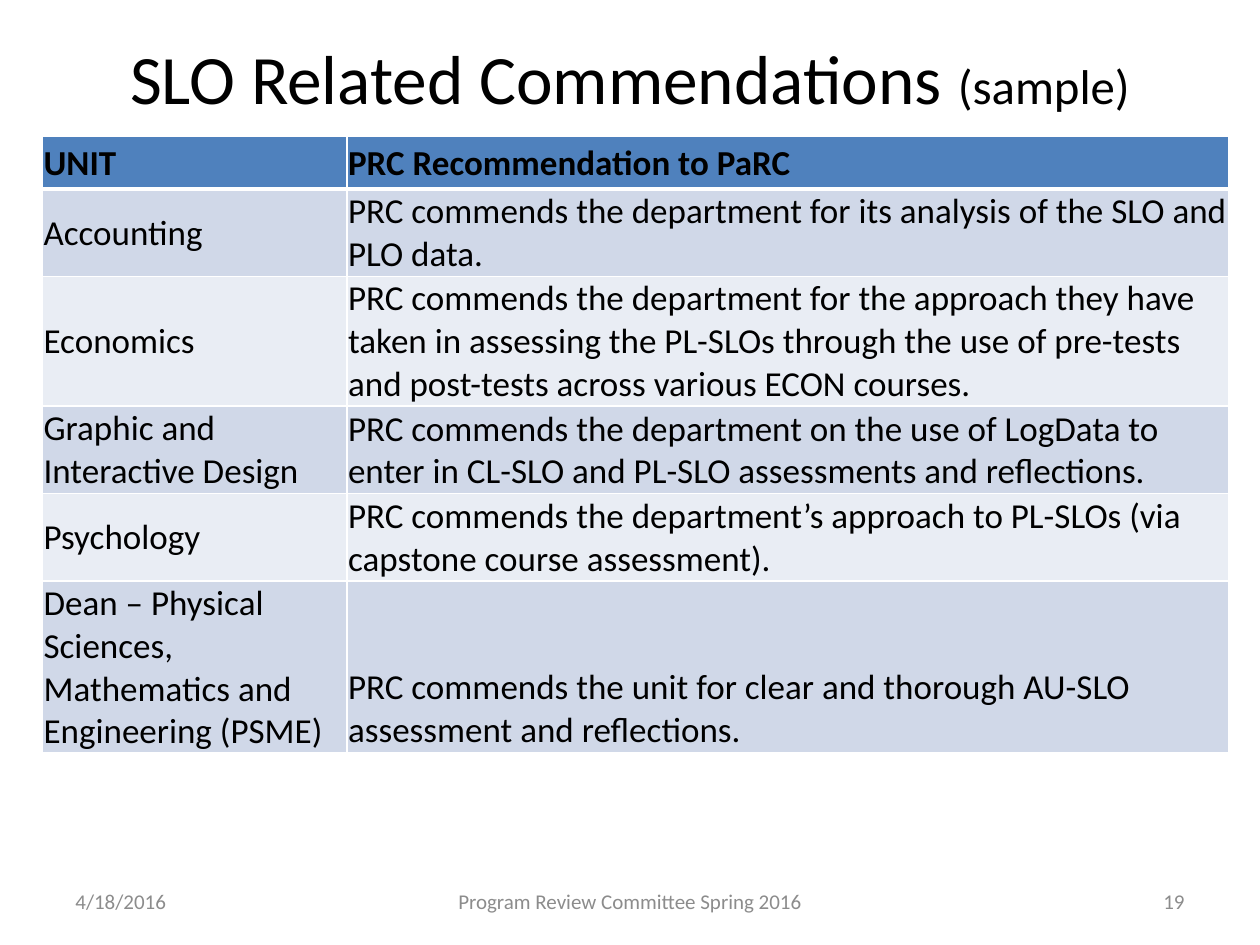
import pptx
import pptx.dml.color
import pptx.enum.text
import pptx.oxml.ns
import pptx.util
from lxml import etree

Pt = pptx.util.Pt
RGBColor = pptx.dml.color.RGBColor
ALIGN = pptx.enum.text.PP_ALIGN
ANCHOR = pptx.enum.text.MSO_ANCHOR
qn = pptx.oxml.ns.qn

FONT = "Calibri"
BLACK = RGBColor(0x00, 0x00, 0x00)
GREY = RGBColor(0x8C, 0x8C, 0x8C)
WHITE = RGBColor(0xFF, 0xFF, 0xFF)
HEADER_BLUE = RGBColor(0x4F, 0x81, 0xBD)
BANDS = (RGBColor(0xE9, 0xED, 0xF4), RGBColor(0xD0, 0xD8, 0xE8))

COLUMN_WIDTHS = (174, 504)
# Row height, unit, recommendation, anchor of the recommendation
ROWS = (
    (30, "UNIT", "PRC Recommendation to PaRC", ANCHOR.MIDDLE),
    (50, "Accounting",
     "PRC commends the department for its analysis of the SLO and PLO data.",
     ANCHOR.MIDDLE),
    (74, "Economics",
     "PRC commends the department for the approach they have taken in "
     "assessing the PL-SLOs through the use of pre-tests and post-tests "
     "across various ECON courses.", ANCHOR.BOTTOM),
    (50, "Graphic and Interactive Design",
     "PRC commends the department on the use of LogData to enter in CL-SLO "
     "and PL-SLO assessments and reflections.", ANCHOR.BOTTOM),
    (50, "Psychology",
     "PRC commends the department’s approach to PL-SLOs (via capstone course "
     "assessment).", ANCHOR.BOTTOM),
    (98, "Dean – Physical Sciences, Mathematics and Engineering (PSME)",
     "PRC commends the unit for clear and thorough AU-SLO assessment and "
     "reflections.", ANCHOR.BOTTOM),
)
FOOTERS = (
    (36, 168, "4/18/2016", ALIGN.LEFT),
    (246, 228, "Program Review Committee Spring 2016", ALIGN.CENTER),
    (516, 168, "19", ALIGN.RIGHT),
)


def style_font(font, size, color, bold=False):
    font.name = FONT
    font.size = Pt(size)
    font.color.rgb = color
    font.bold = bold


def add_text(slide, left, top, width, height, align):
    """Add a wrapped, vertically centred text box and return its paragraph."""
    box = slide.shapes.add_textbox(Pt(left), Pt(top), Pt(width), Pt(height))
    frame = box.text_frame
    frame.word_wrap = True
    frame.vertical_anchor = ANCHOR.MIDDLE
    paragraph = frame.paragraphs[0]
    paragraph.alignment = align
    return paragraph


def add_title(slide):
    title = add_text(slide, 36, 21.6, 648, 44.6, ALIGN.CENTER)
    for text, size in (("SLO Related Commendations ", 39.6), ("(sample)", 27.9)):
        run = title.add_run()
        run.text = text
        style_font(run.font, size, BLACK)


def add_footer(slide, left, width, text, align):
    footer = add_text(slide, left, 500.4, width, 28.8, align)
    footer.text = text
    style_font(footer.font, 12, GREY)


def set_borders(cell, **widths):
    """Draw white borders; widths maps L, R, T and B to points."""
    properties = cell._tc.get_or_add_tcPr()
    for side, width in widths.items():
        line = etree.SubElement(properties, qn(f"a:ln{side}"), w=str(Pt(width)))
        fill = etree.SubElement(line, qn("a:solidFill"))
        etree.SubElement(fill, qn("a:srgbClr"), val=str(WHITE))


def fill_cell(cell, text, anchor, color, is_header, top_border):
    set_borders(cell, L=1, R=1, T=top_border, B=3 if is_header else 1)
    cell.fill.solid()
    cell.fill.fore_color.rgb = color
    cell.margin_left = cell.margin_right = cell.margin_top = Pt(0.7)
    cell.margin_bottom = Pt(0)
    cell.vertical_anchor = anchor
    cell.text = text
    style_font(cell.text_frame.paragraphs[0].font, 20, BLACK, is_header)


def add_commendations(slide):
    table = slide.shapes.add_table(
        len(ROWS), len(COLUMN_WIDTHS), Pt(24.25), Pt(78),
        Pt(sum(COLUMN_WIDTHS)), Pt(sum(row[0] for row in ROWS))).table
    table.horz_banding = False
    for column, width in zip(table.columns, COLUMN_WIDTHS):
        column.width = Pt(width)
    for index, (height, unit, recommendation, anchor) in enumerate(ROWS):
        table.rows[index].height = Pt(height)
        is_header = index == 0
        color = HEADER_BLUE if is_header else BANDS[index % 2]
        top_border = 3 if index == 1 else 1
        for column, (text, place) in enumerate(
                ((unit, ANCHOR.MIDDLE), (recommendation, anchor))):
            fill_cell(table.cell(index, column), text, place, color,
                      is_header, top_border)


def main():
    presentation = pptx.Presentation()
    presentation.slide_width = Pt(720)
    presentation.slide_height = Pt(540)
    slide = presentation.slides.add_slide(presentation.slide_layouts[6])
    add_title(slide)
    add_commendations(slide)
    for footer in FOOTERS:
        add_footer(slide, *footer)
    presentation.save("out.pptx")


if __name__ == "__main__":
    main()
